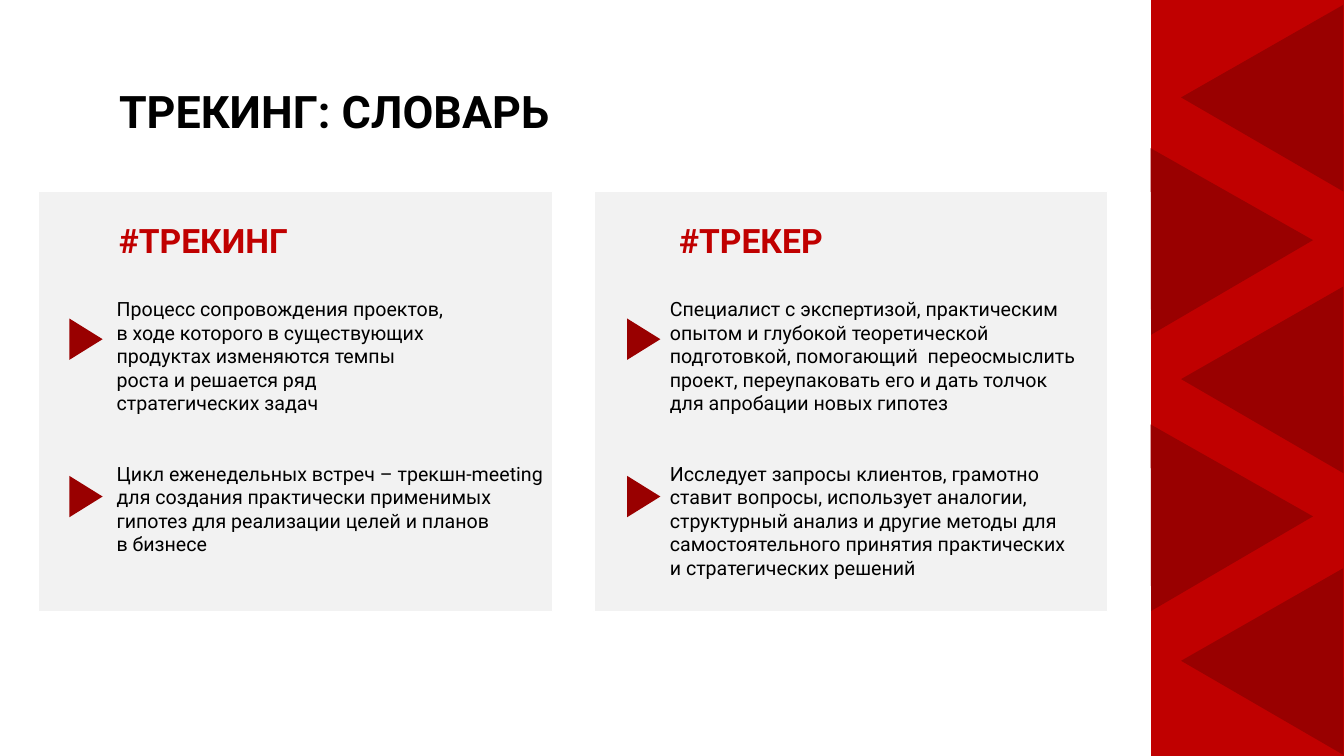
import pptx
import pptx.util
import pptx.dml.color
import pptx.enum.shapes
import pptx.enum.text

Pt = pptx.util.Pt
RGBColor = pptx.dml.color.RGBColor
SHAPES = pptx.enum.shapes.MSO_SHAPE

BLACK = RGBColor(0x00, 0x00, 0x00)
WHITE = RGBColor(0xFF, 0xFF, 0xFF)
GREY = RGBColor(0xF2, 0xF2, 0xF2)
RED = RGBColor(0xC0, 0x00, 0x00)
DARK_RED = RGBColor(0x99, 0x00, 0x00)

deck = pptx.Presentation()
deck.slide_width = Pt(960)
deck.slide_height = Pt(540)
page = deck.slides.add_slide(deck.slide_layouts[5])


def add_figure(kind, left, top, width, height, color, rotation=0):
    figure = page.shapes.add_shape(kind, Pt(left), Pt(top), Pt(width), Pt(height))
    figure.shadow.inherit = False
    figure.fill.solid()
    figure.fill.fore_color.rgb = color
    figure.line.fill.background()
    figure.rotation = rotation
    return figure


def write_text(box, text, size, color, bold=False):
    """Fill a box with left-aligned text, one paragraph per line."""
    frame = box.text_frame
    frame.text = text
    frame.word_wrap = True
    frame.auto_size = pptx.enum.text.MSO_AUTO_SIZE.NONE
    frame.vertical_anchor = pptx.enum.text.MSO_ANCHOR.TOP
    for para in frame.paragraphs:
        para.alignment = pptx.enum.text.PP_ALIGN.LEFT
        for span in para.runs:
            span.font.name = "Roboto"
            span.font.size = Pt(size)
            span.font.bold = bold
            span.font.color.rgb = color


title = page.shapes.title
title.left, title.top, title.width, title.height = Pt(77.8), Pt(56), Pt(628.5), Pt(46)
write_text(title, "ТРЕКИНГ: СЛОВАРЬ", 32, BLACK, bold=True)

# Red band with interlocking triangles
add_figure(SHAPES.RECTANGLE, 822.2, 0, 137.8, 540, RED)
for left, first_top, step, count, rotation in (
    (863.5, -4.2, 201.2, 3, 30.1),
    (784, 98, 197.3, 2, 329.7),
):
    for index in range(count):
        add_figure(SHAPES.ISOSCELES_TRIANGLE, left, first_top + index * step,
                   134, 115.2, DARK_RED, rotation)

# Each column: panel, marker, heading and text lefts, heading, (width, text) entries
columns = (
    (27.5, 46.6, 77.8, 76.2, "#ТРЕКИНГ", (
        (250, "Процесс сопровождения проектов, в ходе которого в существующих "
              "продуктах изменяются темпы роста и решается ряд стратегических задач"),
        (322.6, "Цикл еженедельных встреч – трекшн-meeting для создания практически "
                "применимых гипотез для реализации целей и планов\nв бизнесе"),
    )),
    (424.2, 445, 478, 471.4, "#ТРЕКЕР", (
        (304.6, "Специалист с экспертизой, практическим опытом и глубокой "
                "теоретической подготовкой, помогающий  переосмыслить проект, "
                "переупаковать его и дать толчок для апробации новых гипотез"),
        (304.6, "Исследует запросы клиентов, грамотно ставит вопросы, использует "
                "аналогии, структурный анализ и другие методы для самостоятельного "
                "принятия практических\nи стратегических решений"),
    )),
)
for panel_left, marker_left, heading_left, text_left, heading, entries in columns:
    panel = add_figure(SHAPES.RECTANGLE, panel_left, 136.8, 367, 300, GREY)
    panel.line.color.rgb = WHITE
    panel.line.width = Pt(1)

    heading_box = page.shapes.add_textbox(Pt(heading_left), Pt(153.4), Pt(214), Pt(36))
    write_text(heading_box, heading, 24, RED, bold=True)

    for (width, text), text_top, marker_top in zip(entries, (208.8, 326.2), (230.4, 342.8)):
        add_figure(SHAPES.ISOSCELES_TRIANGLE, marker_left, marker_top,
                   29.6, 23.8, DARK_RED, 90)
        text_box = page.shapes.add_textbox(Pt(text_left), Pt(text_top), Pt(width), Pt(92))
        write_text(text_box, text, 14, BLACK)

deck.save("out.pptx")
